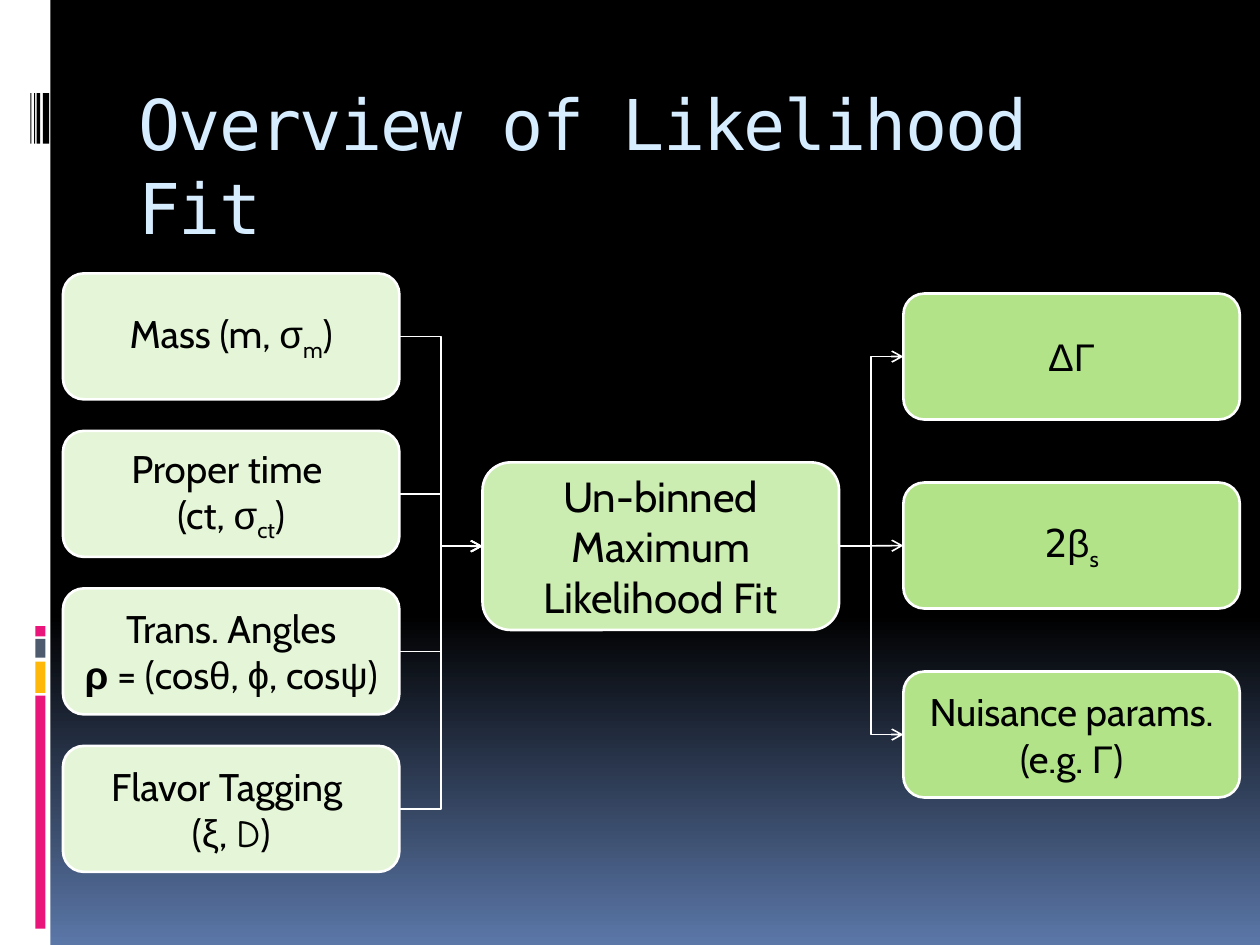
from copy import deepcopy
from lxml import etree
from pptx import Presentation
from pptx.dml.color import RGBColor
from pptx.enum import shapes, text
from pptx.oxml.ns import qn
from pptx.util import Inches, Pt

BLACK = RGBColor(0x00, 0x00, 0x00)
WHITE = RGBColor(0xFF, 0xFF, 0xFF)
NAVY = RGBColor(0x5B, 0x77, 0xA8)
PINK = RGBColor(0xEA, 0x15, 0x7A)
AMBER = RGBColor(0xFE, 0xB8, 0x0A)
SLATE = RGBColor(0x4E, 0x5B, 0x6F)
SKY = RGBColor(0xD6, 0xEC, 0xFF)
PALE = RGBColor(0xE5, 0xF6, 0xD8)
LIGHT = RGBColor(0xCC, 0xED, 0xB1)
GREEN = RGBColor(0xB2, 0xE3, 0x89)
BODY, GREEK, MONO = "Cabin", "Arial", "DejaVu Sans Mono"


def write(para, words, size=22, font=BODY, color=BLACK, bold=False, sub=False, track=0):
    run = para.add_run()
    run.text = words
    run.font.size, run.font.name, run.font.bold = Pt(size), font, bold
    run.font.color.rgb = color
    props = run._r.get_or_add_rPr()
    if sub:
        props.set("baseline", "-25000")
    if track:
        props.set("spc", str(track * 100))


def block(kind, left, top, width, height, fill, paras=(), size=22):
    """Add a filled shape; each paragraph is a list of (words, format) runs."""
    box = slide.shapes.add_shape(
        kind, Inches(left), Inches(top), Inches(width), Inches(height))
    box.shadow.inherit = False
    box.fill.solid()
    box.fill.fore_color.rgb = fill
    if not paras:
        box.line.fill.background()
        return box
    box.line.color.rgb, box.line.width = WHITE, Pt(1.5)
    frame = box.text_frame
    frame.word_wrap = True
    frame.vertical_anchor = text.MSO_ANCHOR.MIDDLE
    for i, runs in enumerate(paras):
        para = frame.add_paragraph() if i else frame.paragraphs[0]
        para.alignment = text.PP_ALIGN.CENTER
        for words, style in runs:
            write(para, words, **{"size": size, **style})
    return box


prs = Presentation()
prs.slide_width, prs.slide_height = Inches(10), Inches(7.5)
slide = prs.slides.add_slide(prs.slide_layouts[6])

# Background: black down to 65 %, then fading to blue
back = slide.background.fill
back.gradient()
back.gradient_angle = 270
first, last = back.gradient_stops
first.position, last.position = 0, 1
first.color.rgb, last.color.rgb = BLACK, NAVY
stops = next(slide._element.iter(qn("a:gsLst")))
middle = deepcopy(stops[0])
middle.set("pos", "65000")
stops.insert(1, middle)

# Side strip with coloured bars and thin black stripes
RECT, ROUND = shapes.MSO_SHAPE.RECTANGLE, shapes.MSO_SHAPE.ROUNDED_RECTANGLE
block(RECT, 0, 0, 0.4, 7.5, WHITE)
for top, height, color in [(5.52, 1.85, PINK), (5.25, 0.25, AMBER),
                           (5.07, 0.15, SLATE), (4.97, 0.08, PINK)]:
    block(RECT, 0.28, top, 0.08, height, color)
for left, width in [(0.34, 0.05), (0.29, 0.03), (0.27, 0.01), (0.24, 0.01)]:
    block(RECT, left, 0.74, width, 0.4, BLACK)

title = slide.shapes.add_textbox(Inches(1), Inches(0.56), Inches(8.5), Inches(1))
title.text_frame.word_wrap = True
title.text_frame.margin_top = Inches(0.08)
head = title.text_frame.paragraphs[0]
head.line_spacing = Pt(48)
write(head, "Overview of Likelihood Fit", size=40, font=MONO, color=SKY, track=-1)

# Inputs, fit and results
plain, greek, sub = {}, {"font": GREEK}, {"sub": True}
inputs = [
    [[("Mass (m, ", plain), ("σ", greek), ("m", sub), (")", plain)]],
    [[("Proper time ", plain)],
     [("(ct, ", plain), ("σ", greek), ("ct", sub), (")", plain)]],
    [[("Trans. Angles", plain)],
     [("ρ", {"font": GREEK, "bold": True}), (" = (cos", plain), ("θ", greek),
      (", ", plain), ("ϕ", greek), (", cos", plain), ("ψ", greek), (")", plain)]],
    [[("Flavor Tagging ", plain)],
     [("(", plain), ("ξ", greek), (", ", plain),
      ("D", {"font": "Comic Neue"}), (")", plain)]],
]
results = [
    [[("ΔΓ", greek)]],
    [[("2", {"font": MONO}), ("β", greek), ("s", sub)]],
    [[("Nuisance params. (e.g. ", plain), ("Γ", greek), (")", plain)]],
]
sources = [block(ROUND, 0.5, 2.17 + 1.25 * i, 2.67, 1, PALE, paras)
           for i, paras in enumerate(inputs)]
fit = block(ROUND, 3.83, 3.67, 2.83, 1.33, LIGHT,
            [[("Un-binned Maximum Likelihood Fit", plain)]], size=24)
targets = [block(ROUND, 7.17, 2.33 + 1.5 * i, 2.67, 1, GREEN, paras)
           for i, paras in enumerate(results)]

# Arrows run from the right side of one box to the left side of the next
for start, end in [(s, fit) for s in sources] + [(fit, t) for t in targets]:
    kind = shapes.MSO_CONNECTOR.ELBOW
    if end is targets[1]:
        kind = shapes.MSO_CONNECTOR.STRAIGHT
    link = slide.shapes.add_connector(kind, 0, 0, 0, 0)
    link.begin_connect(start, 3)
    link.end_connect(end, 1)
    link.line.color.rgb, link.line.width = WHITE, Pt(0.94)
    etree.SubElement(link.line._get_or_add_ln(), qn("a:tailEnd"), type="arrow")
    etree.SubElement(link._element.spPr, qn("a:effectLst"))

prs.save("out.pptx")
